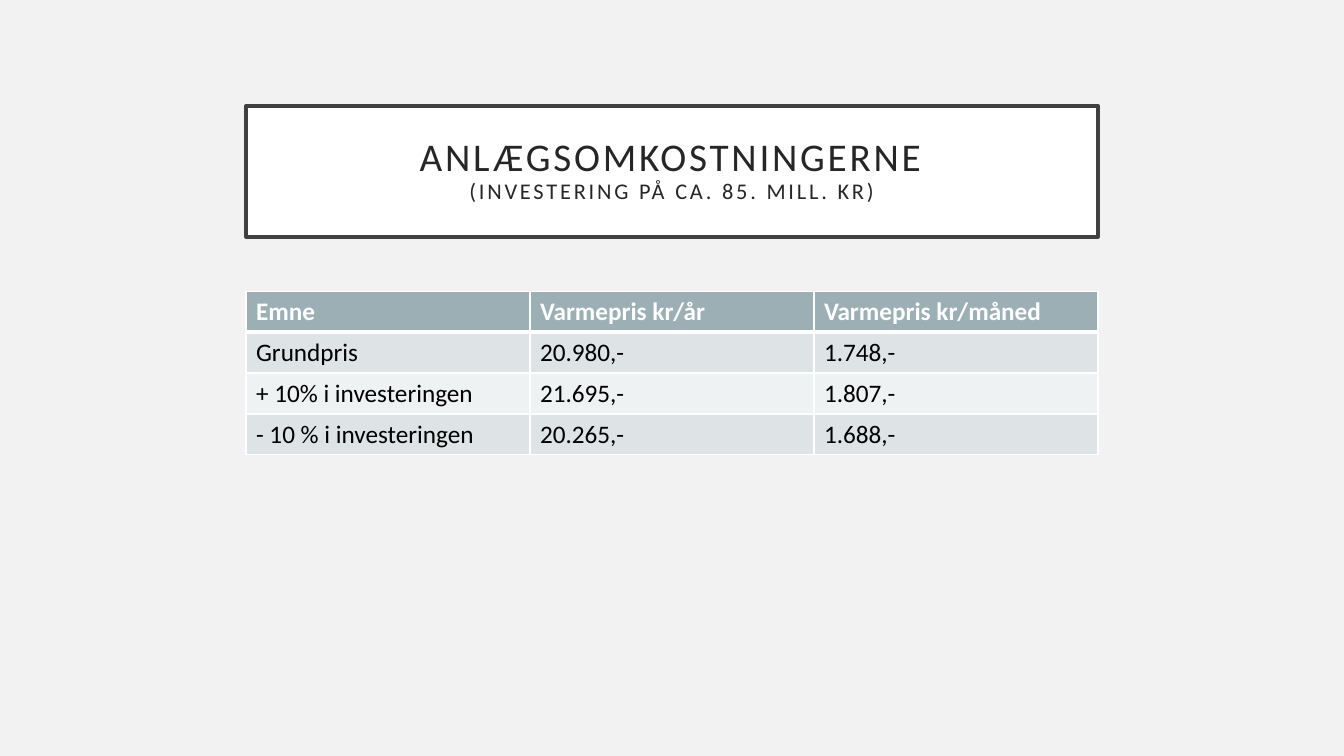
"""Build a slide with a boxed title and a table of heating prices."""
import lxml.etree
import pptx
import pptx.dml.color
import pptx.enum.text
import pptx.oxml.ns
import pptx.util

ROWS = [
    ("Emne", "Varmepris kr/år", "Varmepris kr/måned"),
    ("Grundpris", "20.980,-", "1.748,-"),
    ("+ 10% i investeringen", "21.695,-", "1.807,-"),
    ("- 10 % i investeringen", "20.265,-", "1.688,-"),
]
HEADER_FILL = "9BAFB5"
BAND_FILLS = ["EFF2F3", "DEE3E5"]
LEFT, WIDTH, ROW_HEIGHT = 2.44, 8.45, 0.405


def color(hex_value):
    return pptx.dml.color.RGBColor.from_string(hex_value)


def write(paragraph, text, size=18, fill="000000", bold=False, spacing=0):
    run = paragraph.add_run()
    run.text = text
    run.font.name = "Calibri"
    run.font.size = pptx.util.Pt(size)
    run.font.bold = bold
    run.font.color.rgb = color(fill)
    if spacing:
        run.font._element.set("spc", str(spacing * 100))


presentation = pptx.Presentation()
presentation.slide_width = pptx.util.Inches(13.33)
presentation.slide_height = pptx.util.Inches(7.5)
slide = presentation.slides.add_slide(presentation.slide_layouts[5])
slide.background.fill.solid()
slide.background.fill.fore_color.rgb = color("F2F2F2")

title = slide.shapes.title
title.left, title.top = pptx.util.Inches(LEFT), pptx.util.Inches(1.05)
title.width, title.height = pptx.util.Inches(WIDTH), pptx.util.Inches(1.3)
title.fill.solid()
title.fill.fore_color.rgb = color("FFFFFF")
title.line.color.rgb = color("404040")
title.line.width = pptx.util.Pt(2.5)
frame = title.text_frame
frame.word_wrap = True
frame.auto_size = pptx.enum.text.MSO_AUTO_SIZE.NONE
frame.vertical_anchor = pptx.enum.text.MSO_ANCHOR.MIDDLE
frame.margin_left = frame.margin_right = pptx.util.Inches(0.2)
frame.margin_top = frame.margin_bottom = pptx.util.Inches(0.2)
heading = frame.paragraphs[0]
heading.alignment = pptx.enum.text.PP_ALIGN.CENTER
heading.line_spacing = 0.9
write(heading, "ANLÆGSOMKOSTNINGERNE", size=28, fill="262626", spacing=2)
heading.add_line_break()
write(heading, "(INVESTERING PÅ CA. 85. MILL. KR)", size=16, fill="262626", spacing=2)

table = slide.shapes.add_table(
    len(ROWS), len(ROWS[0]), pptx.util.Inches(LEFT), pptx.util.Inches(2.89),
    pptx.util.Inches(WIDTH), pptx.util.Inches(ROW_HEIGHT * len(ROWS))).table
for row, texts in enumerate(ROWS):
    is_header = row == 0
    for column, text in enumerate(texts):
        cell = table.cell(row, column)
        write(cell.text_frame.paragraphs[0], text, bold=is_header,
              fill="FFFFFF" if is_header else "000000")
        properties = cell._tc.get_or_add_tcPr()
        for side in ("L", "R", "T", "B"):
            under_header = (row, side) in [(0, "B"), (1, "T")]
            border = lxml.etree.SubElement(properties, pptx.oxml.ns.qn(f"a:ln{side}"))
            border.set("w", str(pptx.util.Pt(3 if under_header else 1)))
            solid = lxml.etree.SubElement(border, pptx.oxml.ns.qn("a:solidFill"))
            lxml.etree.SubElement(solid, pptx.oxml.ns.qn("a:srgbClr")).set("val", "FFFFFF")
        cell.fill.solid()
        cell.fill.fore_color.rgb = color(HEADER_FILL if is_header else BAND_FILLS[row % 2])

presentation.save("out.pptx")
